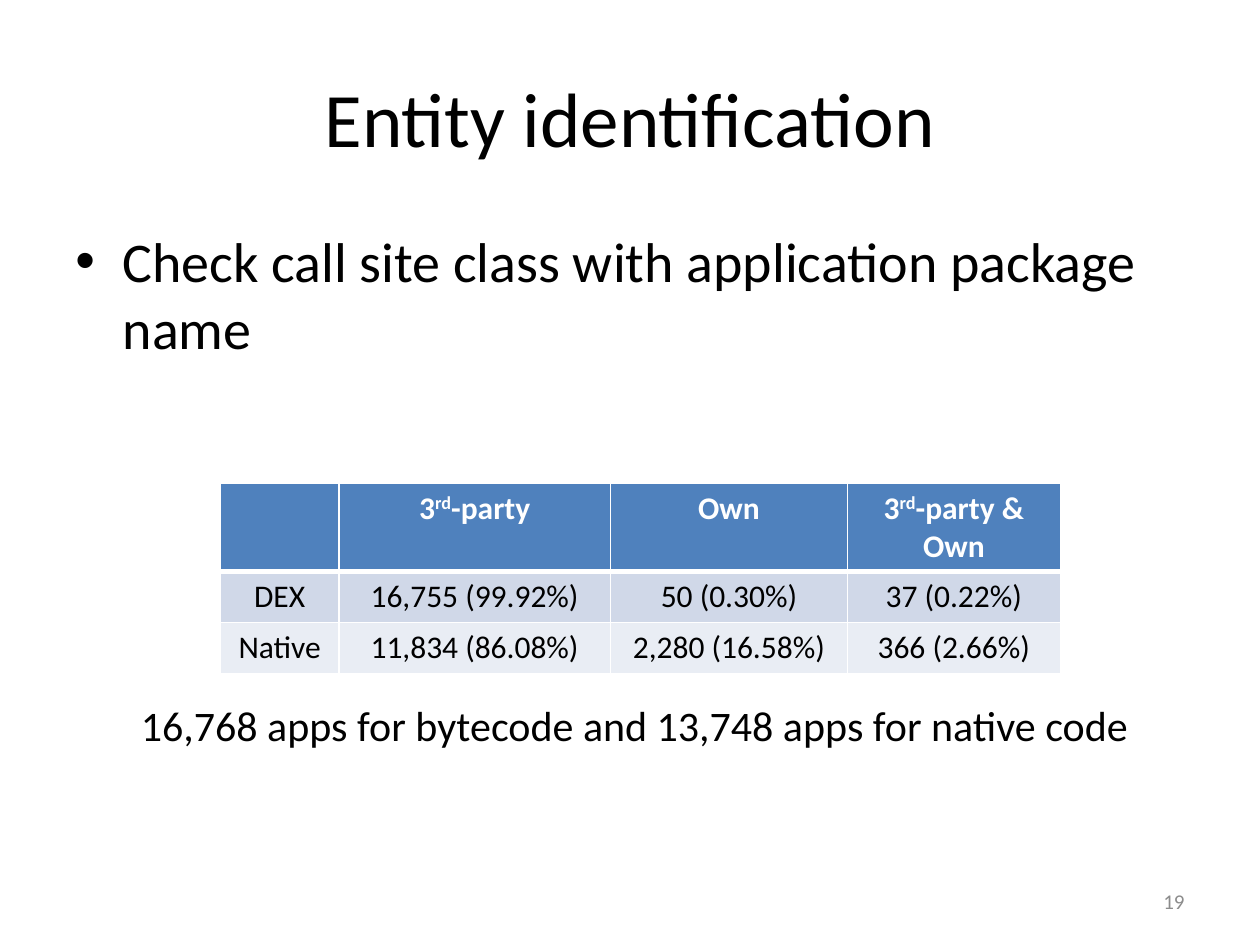
from dataclasses import dataclass

from lxml.etree import SubElement
from pptx import Presentation
from pptx.dml.color import RGBColor
from pptx.enum.text import MSO_ANCHOR as Anchor, MSO_AUTO_SIZE as AutoSize, PP_ALIGN as Align
from pptx.oxml.ns import qn
from pptx.util import Pt


@dataclass(frozen=True)
class Theme:
    font: str = "Calibri"
    ink: str = "000000"
    muted: str = "8C8C8C"
    paper: str = "FFFFFF"
    header: str = "4F81BD"
    bands: tuple[str, ...] = ("D0D8E8", "E9EDF4")
    title: float = 44
    body: float = 32
    caption: float = 24
    table: float = 18
    number: float = 12
    rule: float = 1
    header_rule: float = 3


@dataclass(frozen=True)
class Span:
    text: str
    raised: bool = False


@dataclass(frozen=True)
class Block:
    text: str
    box: tuple[float, float, float, float]
    size: float
    color: str
    align: Align = Align.LEFT
    anchor: Anchor = Anchor.TOP
    bullet: bool = False
    wrap: bool = True


THEME = Theme()
BLOCKS = (
    Block("Entity identification", (36, 21.6, 648, 90), THEME.title, THEME.ink,
          Align.CENTER, Anchor.MIDDLE),
    Block("Check call site class with application package name",
          (36, 126, 648, 356.4), THEME.body, THEME.ink, bullet=True),
    Block("19", (516, 500.5, 168, 28.75), THEME.number, THEME.muted,
          Align.RIGHT, Anchor.MIDDLE),
    Block("16,768 apps for bytecode and 13,748 apps for native code",
          (69.1, 396, 587, 36), THEME.caption, THEME.ink, Align.CENTER, wrap=False),
)

THIRD_PARTY = (Span("3"), Span("rd", raised=True))
HEADINGS = (
    (),
    (*THIRD_PARTY, Span("-party")),
    (Span("Own"),),
    (*THIRD_PARTY, Span("-party & Own")),
)
COUNTS = (
    ("DEX", "16,755 (99.92%)", "50 (0.30%)", "37 (0.22%)"),
    ("Native", "11,834 (86.08%)", "2,280 (16.58%)", "366 (2.66%)"),
)
TABLE_LEFT, TABLE_TOP = 126, 276
COLUMN_WIDTHS = (67.6, 155.4, 135.2, 121.8)
ROW_HEIGHTS = (50.4, 29.2, 29.2)


def style(font, size: float, color: str, bold: bool = False) -> None:
    font.name = THEME.font
    font.size = Pt(size)
    font.bold = bold
    font.color.rgb = RGBColor.from_string(color)


def add_bullet(paragraph, indent: float) -> None:
    props = paragraph._p.get_or_add_pPr()
    props.set("marL", str(Pt(indent)))
    props.set("indent", str(-Pt(indent)))
    SubElement(props, qn("a:buFont"), typeface="Arial")
    SubElement(props, qn("a:buChar"), char="•")


def add_block(slide, block: Block) -> None:
    frame = slide.shapes.add_textbox(*map(Pt, block.box)).text_frame
    frame.word_wrap = block.wrap
    frame.auto_size = AutoSize.NONE if block.wrap else AutoSize.SHAPE_TO_FIT_TEXT
    frame.vertical_anchor = block.anchor
    paragraph = frame.paragraphs[0]
    paragraph.alignment = block.align
    if block.bullet:
        add_bullet(paragraph, 27)
    run = paragraph.add_run()
    run.text = block.text
    style(run.font, block.size, block.color)


def add_border(cell, side: str, width: float) -> None:
    line = SubElement(cell._tc.get_or_add_tcPr(), qn(f"a:ln{side}"), w=str(Pt(width)))
    SubElement(SubElement(line, qn("a:solidFill")), qn("a:srgbClr"), val=THEME.paper)


def fill_cell(cell, spans: tuple[Span, ...], fill: str, color: str, bold: bool,
              top: float, bottom: float) -> None:
    for side, width in zip("LRTB", (THEME.rule, THEME.rule, top, bottom)):
        add_border(cell, side, width)
    cell.fill.solid()
    cell.fill.fore_color.rgb = RGBColor.from_string(fill)
    paragraph = cell.text_frame.paragraphs[0]
    paragraph.alignment = Align.CENTER
    paragraph.font.size = Pt(THEME.table)
    for span in spans:
        run = paragraph.add_run()
        run.text = span.text
        style(run.font, THEME.table, color, bold)
        if span.raised:
            run._r.get_or_add_rPr().set("baseline", "30000")


def add_counts_table(slide) -> None:
    table = slide.shapes.add_table(
        len(ROW_HEIGHTS), len(COLUMN_WIDTHS), Pt(TABLE_LEFT), Pt(TABLE_TOP),
        Pt(sum(COLUMN_WIDTHS)), Pt(sum(ROW_HEIGHTS))).table
    for column, width in zip(table.columns, COLUMN_WIDTHS):
        column.width = Pt(width)
    for row, height in zip(table.rows, ROW_HEIGHTS):
        row.height = Pt(height)
    for column, heading in enumerate(HEADINGS):
        fill_cell(table.cell(0, column), heading, THEME.header, THEME.paper, True,
                  THEME.rule, THEME.header_rule)
    for row, (counts, band) in enumerate(zip(COUNTS, THEME.bands), start=1):
        top = THEME.header_rule if row == 1 else THEME.rule
        for column, count in enumerate(counts):
            fill_cell(table.cell(row, column), (Span(count),), band, THEME.ink, False,
                      top, THEME.rule)


def main() -> None:
    deck = Presentation()
    deck.slide_width, deck.slide_height = Pt(720), Pt(540)
    slide = deck.slides.add_slide(deck.slide_layouts[6])
    for block in BLOCKS:
        add_block(slide, block)
    add_counts_table(slide)
    deck.save("out.pptx")


if __name__ == "__main__":
    main()
